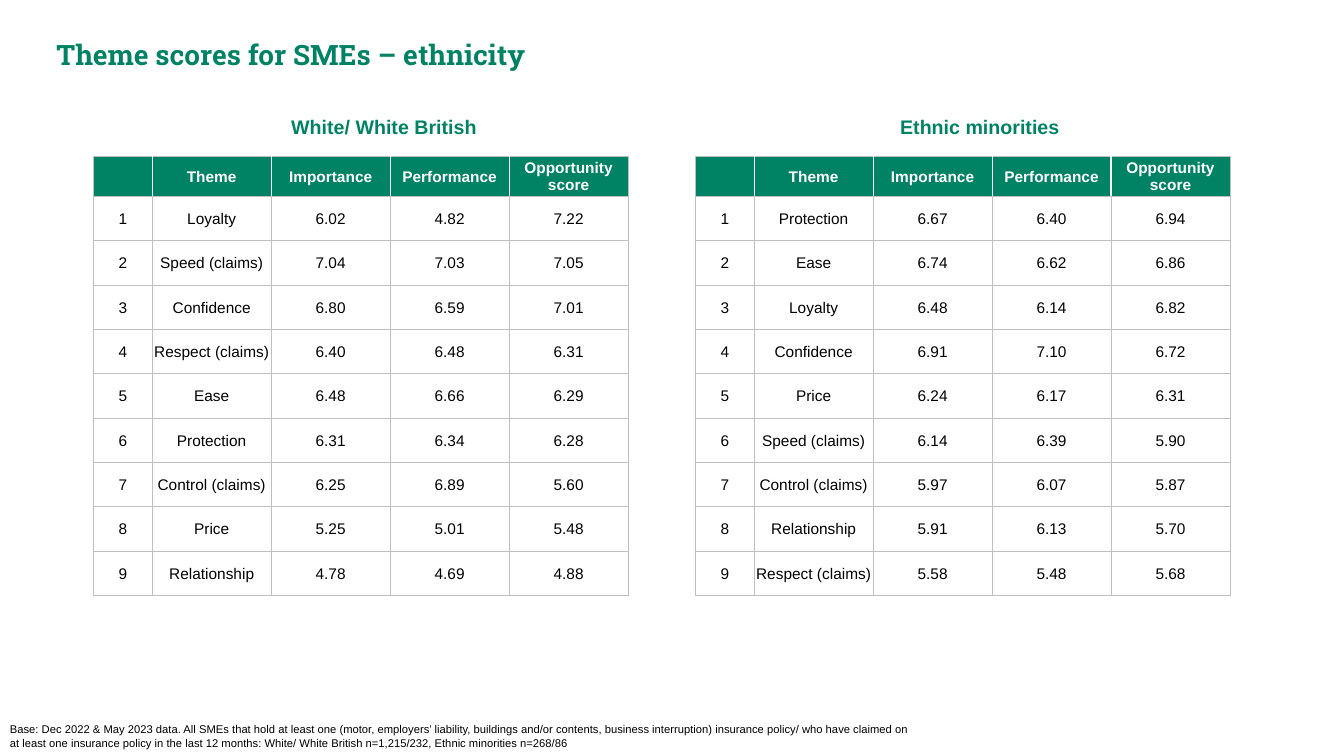
from dataclasses import dataclass

from lxml.etree import SubElement
from pptx import Presentation
from pptx.dml.color import RGBColor
from pptx.enum.text import MSO_ANCHOR, MSO_AUTO_SIZE, PP_ALIGN
from pptx.oxml.ns import qn
from pptx.slide import Slide
from pptx.table import _Cell
from pptx.text.text import TextFrame, _Paragraph
from pptx.util import Inches, Pt

GREEN = "008265"
GREY = "BFBFBF"
WHITE = "FFFFFF"
BLACK = "000000"

HEADERS = ("", "Theme", "Importance", "Performance", "Opportunity score")
COLUMN_WIDTHS = (0.58, 1.18, 1.18, 1.18, 1.18)
HEADER_HEIGHT = 0.4
ROW_HEIGHT = 0.44
TABLE_TOP = 1.55


@dataclass
class ScoreTable:
    heading: str
    heading_left: float
    left: float
    scores: list[tuple[str, str, str, str]]


SCORE_TABLES = [
    ScoreTable("White/ White British", 2.79, 0.93, [
        ("Loyalty", "6.02", "4.82", "7.22"),
        ("Speed (claims)", "7.04", "7.03", "7.05"),
        ("Confidence", "6.80", "6.59", "7.01"),
        ("Respect (claims)", "6.40", "6.48", "6.31"),
        ("Ease", "6.48", "6.66", "6.29"),
        ("Protection", "6.31", "6.34", "6.28"),
        ("Control (claims)", "6.25", "6.89", "5.60"),
        ("Price", "5.25", "5.01", "5.48"),
        ("Relationship", "4.78", "4.69", "4.88"),
    ]),
    ScoreTable("Ethnic minorities", 8.83, 6.9, [
        ("Protection", "6.67", "6.40", "6.94"),
        ("Ease", "6.74", "6.62", "6.86"),
        ("Loyalty", "6.48", "6.14", "6.82"),
        ("Confidence", "6.91", "7.10", "6.72"),
        ("Price", "6.24", "6.17", "6.31"),
        ("Speed (claims)", "6.14", "6.39", "5.90"),
        ("Control (claims)", "5.97", "6.07", "5.87"),
        ("Relationship", "5.91", "6.13", "5.70"),
        ("Respect (claims)", "5.58", "5.48", "5.68"),
    ]),
]

BASE_NOTE = (
    "Base: Dec 2022 & May 2023 data. All SMEs that hold at least one (motor, employers’ "
    "liability, buildings and/or contents, business interruption) insurance policy/ who have "
    "claimed on at least one insurance policy in the last 12 months: White/ White British "
    "n=1,215/232, Ethnic minorities n=268/86"
)


def color(value: str) -> RGBColor:
    return RGBColor.from_string(value)


def add_span(para: _Paragraph, text: str, size: float, fill: str,
             bold: bool = False, font: str = "Arial") -> None:
    span = para.add_run()
    span.text = text
    span.font.size = Pt(size)
    span.font.name = font
    span.font.bold = bold
    span.font.color.rgb = color(fill)


def set_frame(frame: TextFrame) -> None:
    """Give a text frame wrapping, standard insets and top anchoring."""
    frame.word_wrap = True
    frame.auto_size = MSO_AUTO_SIZE.NONE
    frame.vertical_anchor = MSO_ANCHOR.TOP
    frame.margin_left = frame.margin_right = Inches(0.1)
    frame.margin_top = frame.margin_bottom = Inches(0.05)


def add_title(slide: Slide, text: str) -> None:
    title = slide.shapes.title
    title.left, title.top = Inches(0.46), Inches(0.32)
    title.width, title.height = Inches(12.28), Inches(0.44)
    set_frame(title.text_frame)
    para = title.text_frame.paragraphs[0]
    para.alignment = PP_ALIGN.LEFT
    add_span(para, text, 20, GREEN, bold=True, font="Roboto Slab")


def add_text(slide: Slide, text: str, left: float, top: float, width: float,
             height: float, size: float, fill: str, bold: bool = False) -> None:
    box = slide.shapes.add_textbox(Inches(left), Inches(top), Inches(width), Inches(height))
    set_frame(box.text_frame)
    add_span(box.text_frame.paragraphs[0], text, size, fill, bold)


def add_border(cell: _Cell, side: str, fill: str, width: float) -> None:
    line = SubElement(cell._tc.get_or_add_tcPr(), qn(f"a:ln{side}"), w=str(Pt(width)))
    SubElement(SubElement(line, qn("a:solidFill")), qn("a:srgbClr"), val=fill)


def fill_cell(cell: _Cell, text: str, column: int, is_header: bool) -> None:
    inner_left = is_header and column > 0
    inner_right = is_header and column < len(HEADERS) - 1
    for side, inner in (("L", inner_left), ("R", inner_right), ("T", False), ("B", False)):
        add_border(cell, side, WHITE if inner else GREY, 1 if inner else 0.75)
    if is_header:
        cell.fill.solid()
        cell.fill.fore_color.rgb = color(GREEN)
    else:
        cell.fill.background()
    cell.vertical_anchor = MSO_ANCHOR.MIDDLE
    cell.margin_left = cell.margin_right = cell.margin_top = Inches(0.01)
    cell.margin_bottom = 0
    para = cell.text_frame.paragraphs[0]
    para.alignment = PP_ALIGN.CENTER
    if text:
        add_span(para, text, 11, WHITE if is_header else BLACK, bold=is_header)


def add_score_table(slide: Slide, block: ScoreTable) -> None:
    rows = [HEADERS] + [(str(rank), *score) for rank, score in enumerate(block.scores, 1)]
    height = HEADER_HEIGHT + ROW_HEIGHT * len(block.scores)
    table = slide.shapes.add_table(
        len(rows), len(HEADERS), Inches(block.left), Inches(TABLE_TOP),
        Inches(sum(COLUMN_WIDTHS)), Inches(height)).table
    table.horz_banding = False
    for column, width in zip(table.columns, COLUMN_WIDTHS):
        column.width = Inches(width)
    for row_index, row in enumerate(rows):
        table.rows[row_index].height = Inches(ROW_HEIGHT if row_index else HEADER_HEIGHT)
        for column_index, text in enumerate(row):
            fill_cell(table.cell(row_index, column_index), text, column_index, row_index == 0)


def main() -> None:
    deck = Presentation()
    deck.slide_width, deck.slide_height = Inches(13.33), Inches(7.5)
    page = deck.slides.add_slide(deck.slide_layouts[5])
    add_title(page, "Theme scores for SMEs – ethnicity")
    for block in SCORE_TABLES:
        add_text(page, block.heading, block.heading_left, 1.09, 2.07, 0.34, 14, GREEN, bold=True)
        add_score_table(page, block)
    add_text(page, BASE_NOTE, 0, 7.12, 9.23, 0.38, 8, BLACK)
    deck.save("out.pptx")


if __name__ == "__main__":
    main()
